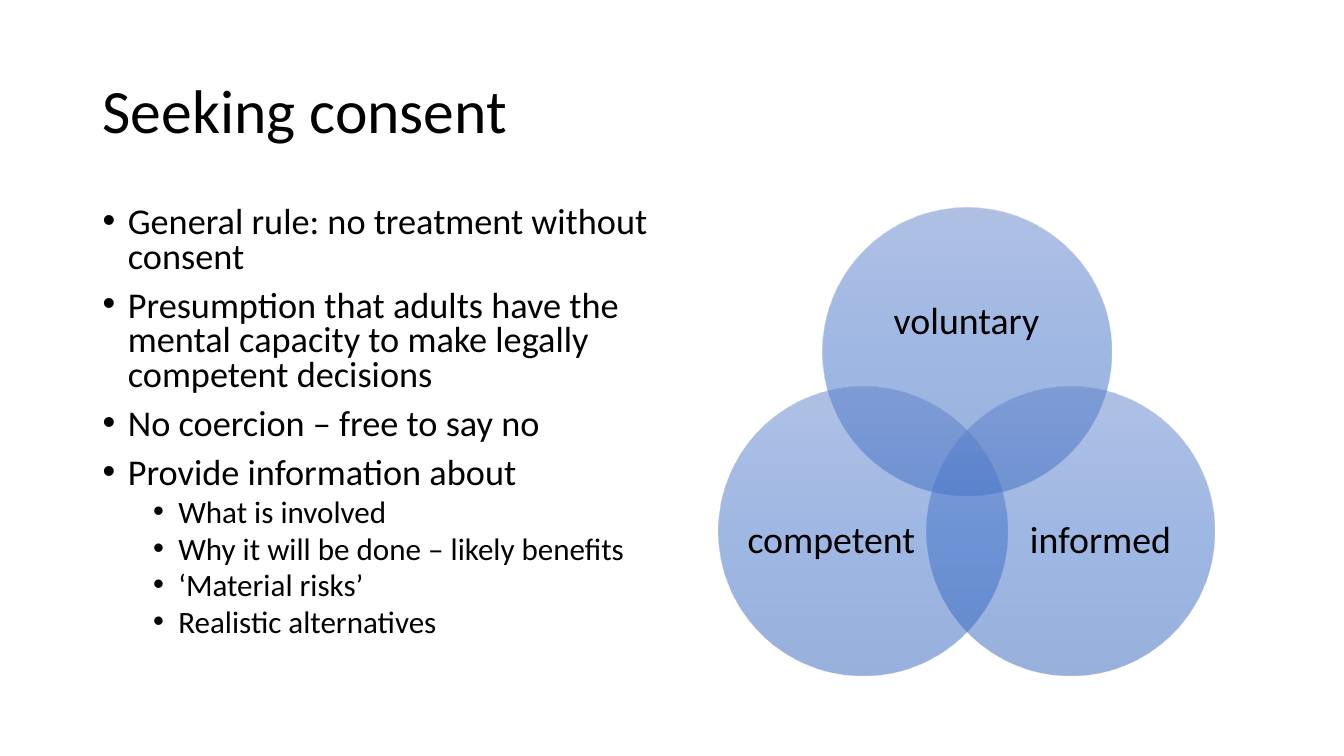
from dataclasses import dataclass

from lxml import etree
from pptx import Presentation
from pptx.dml.color import RGBColor
from pptx.enum.shapes import MSO_SHAPE
from pptx.enum.text import MSO_ANCHOR, PP_ALIGN
from pptx.oxml.ns import qn
from pptx.util import Inches, Pt

OVAL = MSO_SHAPE.OVAL
TOP, MIDDLE = MSO_ANCHOR.TOP, MSO_ANCHOR.MIDDLE
LEFT, CENTER = PP_ALIGN.LEFT, PP_ALIGN.CENTER

FONT = "Calibri"
BLACK = "000000"
GRADIENT = [(0, "6183CB"), (50, "3E70CA"), (100, "3062BB")]
OPACITY = 50
DIAMETER = 2.86
VENN_LEFT, VENN_TOP = 7.13, 2.06
STEP_X, STEP_Y = 1.03, 1.78


@dataclass
class Level:
    size: float
    before: float
    margin: float


@dataclass
class Circle:
    label: str
    column: int
    row: int
    label_box: tuple[float, float, float, float]


LEVELS = [Level(25.9, 10, 0.25), Level(22.2, 5, 0.75)]
BULLETS = [
    (0, "General rule: no treatment without consent"),
    (0, "Presumption that adults have the mental capacity to make legally competent decisions"),
    (0, "No coercion – free to say no"),
    (0, "Provide information about"),
    (1, "What is involved"),
    (1, "Why it will be done – likely benefits"),
    (1, "‘Material risks’"),
    (1, "Realistic alternatives"),
]
CIRCLES = [
    Circle("voluntary", 1, 0, (8.54, 2.56, 2.09, 1.28)),
    Circle("informed", 2, 1, (10.06, 4.58, 1.71, 1.57)),
    Circle("competent", 0, 1, (7.39, 4.58, 1.71, 1.57)),
]


def color(value: str) -> RGBColor:
    return RGBColor.from_string(value)


def set_all(target, values: dict) -> None:
    for name, value in values.items():
        setattr(target, name, value)


def add_box(s, box: tuple, anchor, margins: dict | None = None):
    tf = s.shapes.add_textbox(*map(Inches, box)).text_frame
    set_all(tf, {"word_wrap": True, "vertical_anchor": anchor, **(margins or {})})
    return tf


def write(p, text: str, size: float, spacing: float, align=LEFT) -> None:
    set_all(p, {"line_spacing": spacing, "alignment": align})
    r = p.add_run()
    r.text = text
    set_all(r.font, {"name": FONT, "size": Pt(size)})
    r.font.color.rgb = color(BLACK)


def add_bullet(p, level: int, text: str) -> None:
    style = LEVELS[level]
    set_all(p, {"level": level, "space_before": Pt(style.before)})
    write(p, text, style.size, 0.8)
    pPr = p._p.get_or_add_pPr()
    pPr.set("marL", str(Inches(style.margin)))
    pPr.set("indent", str(Inches(-0.25)))
    etree.SubElement(pPr, qn("a:buFont"), typeface="Arial")
    etree.SubElement(pPr, qn("a:buChar"), char="•")


def fill_gradient(sp) -> None:
    grad = etree.Element(qn("a:gradFill"), rotWithShape="1")
    stops = etree.SubElement(grad, qn("a:gsLst"))
    for position, value in GRADIENT:
        stop = etree.SubElement(stops, qn("a:gs"), pos=str(position * 1000))
        clr = etree.SubElement(stop, qn("a:srgbClr"), val=value)
        etree.SubElement(clr, qn("a:alpha"), val=str(OPACITY * 1000))
    etree.SubElement(grad, qn("a:lin"), ang="5400000", scaled="0")
    sp._element.spPr.find(qn("a:prstGeom")).addnext(grad)


def add_circle(s, circle: Circle) -> None:
    box = (VENN_LEFT + circle.column * STEP_X, VENN_TOP + circle.row * STEP_Y,
           DIAMETER, DIAMETER)
    sp = s.shapes.add_shape(OVAL, *map(Inches, box))
    sp.shadow.inherit = False
    sp.line.fill.background()
    fill_gradient(sp)
    sides = ("left", "top", "right", "bottom")
    tf = add_box(s, circle.label_box, MIDDLE, {f"margin_{side}": 0 for side in sides})
    write(tf.paragraphs[0], circle.label, 27, 0.9, CENTER)


def main() -> None:
    prs = Presentation()
    set_all(prs, {"slide_width": Inches(13.33), "slide_height": Inches(7.5)})
    s = prs.slides.add_slide(prs.slide_layouts[6])

    # Title
    tf = add_box(s, (0.92, 0.4, 11.5, 1.45), MIDDLE)
    write(tf.paragraphs[0], "Seeking consent", 44, 0.9)

    # Bulleted text
    tf = add_box(s, (0.92, 2, 5.67, 4.76), TOP)
    for i, (level, text) in enumerate(BULLETS):
        add_bullet(tf.add_paragraph() if i else tf.paragraphs[0], level, text)

    # Venn diagram
    for circle in CIRCLES:
        add_circle(s, circle)

    prs.save("out.pptx")


if __name__ == "__main__":
    main()
